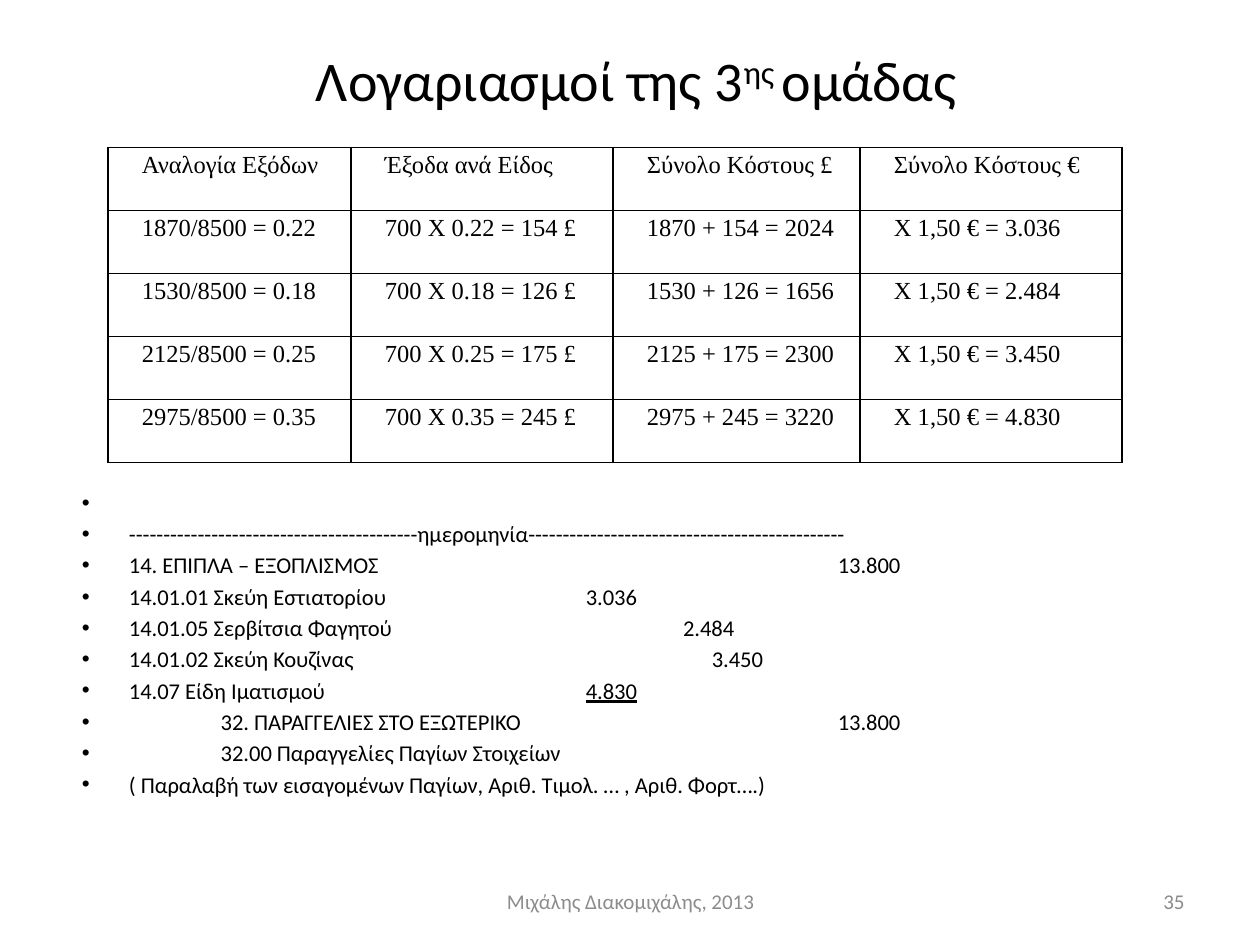
from dataclasses import dataclass

from lxml import etree
from pptx import Presentation
from pptx import util as u
from pptx.dml.color import RGBColor
from pptx.enum import text
from pptx.oxml import ns

Cm, Pt = u.Cm, u.Pt
ALIGN = text.PP_ALIGN
MID = text.MSO_ANCHOR.MIDDLE


@dataclass
class Theme:
    sans: str = "Calibri"
    serif: str = "Times New Roman"
    ink: str = "000000"
    grey: str = "8C8C8C"
    head: float = 32
    cell: float = 14
    body: float = 12.9
    foot: float = 12


def node(root, tag, **attrs):
    return etree.SubElement(root, ns.qn(tag), attrs)


class Deck:
    """Holds the theme and the current slide."""

    def __init__(self, theme):
        self.theme = theme
        self.prs = Presentation()
        self.prs.slide_width, self.prs.slide_height = Cm(25.4), Cm(19.05)
        self.slide = self.prs.slides.add_slide(self.prs.slide_layouts[5])

    def run(self, para, words, size, face=None, ink=None):
        run = para.add_run()
        run.text = words
        font = run.font
        font.size, font.name = Pt(size), face or self.theme.sans
        font.color.rgb = RGBColor.from_string(ink or self.theme.ink)
        return run

    def title(self, box, parts):
        """Fill the title from (words, baseline shift) pairs."""
        shape = self.slide.shapes.title
        shape.left, shape.top, shape.width, shape.height = map(Cm, box)
        frame = shape.text_frame
        frame.vertical_anchor = MID
        para = frame.paragraphs[0]
        para.alignment = ALIGN.CENTER
        for words, shift in parts:
            run = self.run(para, words, self.theme.head)
            if shift:
                run.font._element.set("baseline", str(shift * 1000))

    def box(self, box):
        frame = self.slide.shapes.add_textbox(*map(Cm, box)).text_frame
        frame.word_wrap = True
        return frame

    def label(self, box, words, align):
        frame = self.box(box)
        frame.vertical_anchor = MID
        para = frame.paragraphs[0]
        para.alignment = align
        self.run(para, words, self.theme.foot, ink=self.theme.grey)

    def ledger(self, box, lines):
        """Bulleted lines of (words, indent, amount, tab stop, underline)."""
        frame = self.box(box)
        for i, (words, dent, sum_, stop, under) in enumerate(lines):
            para = frame.add_paragraph() if i else frame.paragraphs[0]
            para.space_before = Pt(2.4)
            props = para._p.get_or_add_pPr()
            props.set("marL", str(Cm(dent)))
            props.set("indent", str(-Cm(dent)))
            node(props, "a:buFont", typeface="Arial")
            node(props, "a:buChar", char="•")
            self.run(para, words, self.theme.body)
            if sum_:
                tabs = node(props, "a:tabLst")
                node(tabs, "a:tab", pos=str(Cm(stop)), algn="l")
                self.run(para, "\t", self.theme.body)
                self.run(para, sum_, self.theme.body).font.underline = under

    def edge(self, cell):
        props = cell._tc.get_or_add_tcPr()
        for i, side in enumerate(("a:lnL", "a:lnR", "a:lnT", "a:lnB")):
            line = etree.Element(ns.qn(side), w=str(Pt(1)))
            node(node(line, "a:solidFill"), "a:srgbClr", val=self.theme.ink)
            props.insert(i, line)

    def table(self, left, top, cols, high, rows):
        shape = self.slide.shapes.add_table(
            len(rows), len(cols), Cm(left), Cm(top),
            Cm(sum(cols)), Cm(high * len(rows)))
        grid = shape.table
        grid.first_row = grid.horz_banding = False
        for col, wide in zip(grid.columns, cols):
            col.width = Cm(wide)
        for r, row in enumerate(rows):
            grid.rows[r].height = Cm(high)
            for c, words in enumerate(row):
                self.cell(grid.cell(r, c), words)

    def cell(self, cell, words):
        cell.fill.background()
        self.edge(cell)
        cell.margin_left = cell.margin_right = Cm(0.18)
        cell.margin_top = cell.margin_bottom = 0
        para = cell.text_frame.paragraphs[0]
        para.alignment = ALIGN.JUSTIFY
        para.line_spacing, para.space_after = 1.15, Pt(6)
        props = para._p.get_or_add_pPr()
        props.set("marL", str(Cm(0.5)))
        props.set("indent", "0")
        self.run(para, words, self.theme.cell, self.theme.serif)


COSTS = [
    ("Αναλογία Εξόδων", "Έξοδα ανά Είδος", "Σύνολο Κόστους £", "Σύνολο Κόστους €"),
    ("1870/8500 = 0.22", "700 Χ 0.22 = 154 £", "1870 + 154 = 2024", "X 1,50 € = 3.036"),
    ("1530/8500 = 0.18", "700 Χ 0.18 = 126 £", "1530 + 126 = 1656", "Χ 1,50 € = 2.484"),
    ("2125/8500 = 0.25", "700 Χ 0.25 = 175 £", "2125 + 175 = 2300", "Χ 1,50 € = 3.450"),
    ("2975/8500 = 0.35", "700 Χ 0.35 = 245 £", "2975 + 245 = 3220", "Χ 1,50 € = 4.830"),
]

NEAR, DEEP = 0.95, 2.8  # indents of debit and credit lines
PART, FULL = 10.16, 15.24  # tab stops of part and total amounts
ENTRIES = [
    (" ", NEAR, "", 0, False),
    ("-" * 42 + "ημερομηνία" + "-" * 46, NEAR, "", 0, False),
    ("14. ΕΠΙΠΛΑ – ΕΞΟΠΛΙΣΜΟΣ", NEAR, "13.800", FULL, False),
    ("14.01.01 Σκεύη Εστιατορίου", NEAR, "3.036", PART, False),
    ("14.01.05 Σερβίτσια Φαγητού", NEAR, "2.484", 12.12, False),
    ("14.01.02 Σκεύη Κουζίνας", NEAR, "3.450", 12.7, False),
    ("14.07 Είδη Ιματισμού", NEAR, "4.830", PART, True),
    ("32. ΠΑΡΑΓΓΕΛΙΕΣ ΣΤΟ ΕΞΩΤΕΡΙΚΟ", DEEP, "13.800", FULL, False),
    ("32.00 Παραγγελίες Παγίων Στοιχείων", DEEP, "", 0, False),
    ("( Παραλαβή των εισαγομένων Παγίων, Αριθ. Τιμολ. … , Αριθ. Φορτ….)",
     NEAR, "", 0, False),
]


def main():
    deck = Deck(Theme())
    deck.title((1.4, 0, 22.86, 3.18),
               [("Λογαριασμοί της 3", 0), ("ης ", 30), ("ομάδας", 0)])
    deck.ledger((1.4, 9.73, 22.86, 5.82), ENTRIES)
    deck.label((8.69, 17.65, 8.05, 1.02), "Μιχάλης Διακομιχάλης, 2013", ALIGN.CENTER)
    deck.label((18.21, 17.65, 5.92, 1.02), "35", ALIGN.RIGHT)
    deck.table(2.18, 2.97, (4.9, 5.28, 4.98, 5.28), 1.27, COSTS)
    deck.prs.save("out.pptx")


if __name__ == "__main__":
    main()
